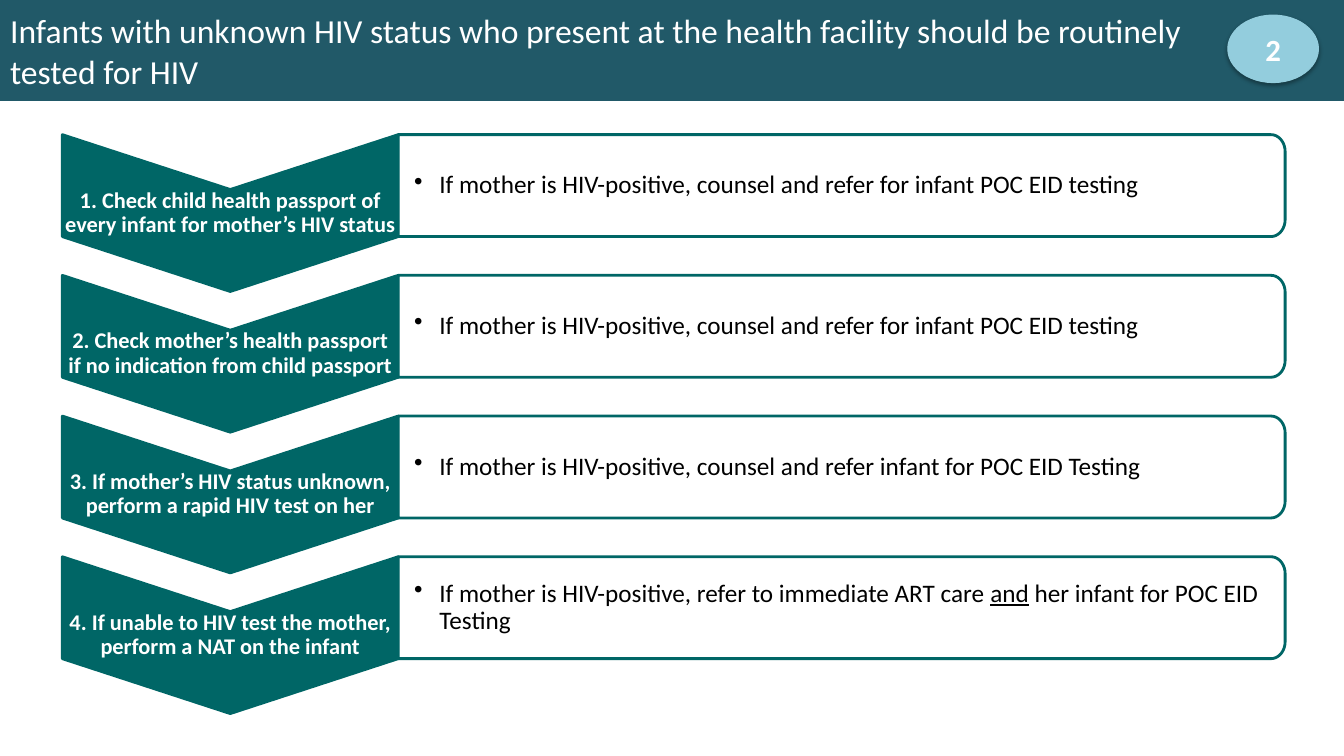
import math

from lxml import etree
from pptx import Presentation
from pptx.dml.color import RGBColor
from pptx.enum.shapes import MSO_SHAPE
from pptx.enum.text import MSO_ANCHOR, MSO_AUTO_SIZE, PP_ALIGN
from pptx.oxml.ns import qn
from pptx.util import Pt

OVAL = MSO_SHAPE.OVAL
MIDDLE = MSO_ANCHOR.MIDDLE
NO_FIT = MSO_AUTO_SIZE.NONE
LEFT, CENTER = PP_ALIGN.LEFT, PP_ALIGN.CENTER

FONT = "Calibri"
COLORS = {
    "banner": "215968",
    "badge": "93CDDD",
    "step": "006666",
    "white": "FFFFFF",
    "black": "000000",
}

TITLE = ("Infants with unknown HIV status who present at the health facility "
         "should be routinely\vtested for HIV")
# Underscores enclose underlined words.
STEPS = [
    ("1. Check child health passport of every infant for mother’s HIV status",
     "If mother is HIV-positive, counsel and refer for infant POC EID testing"),
    ("2. Check mother’s health passport if no indication from child passport",
     "If mother is HIV-positive, counsel and refer for infant POC EID testing"),
    ("3. If mother’s HIV status unknown, perform a rapid HIV test on her",
     "If mother is HIV-positive, counsel and refer infant for POC EID Testing"),
    ("4. If unable to HIV test the mother, perform a NAT on the infant",
     "If mother is HIV-positive, refer to immediate ART care _and_ "
     "her infant for POC EID Testing"),
]

STEP_LEFT, STEP_WIDTH = 44.6, 239.8
ACTION_LEFT, ACTION_WIDTH = 284.4, 633.6
FIRST_TOP, PITCH = 96.2, 100.5
ROW_HEIGHT, NOTCH = 72.8, 39.2
CORNER_WIDTH, CORNER_HEIGHT = 10.1, 12.1


def color(name):
    return RGBColor.from_string(COLORS[name])


def paint(shape, fill, line, line_width):
    shape.shadow.inherit = False
    shape.fill.solid()
    shape.fill.fore_color.rgb = color(fill)
    shape.line.color.rgb = color(line)
    shape.line.width = Pt(line_width)


def write(shape, text, size, ink, align, bold=False, margins=(7.2, 3.6, 7.2, 3.6)):
    """Fill a shape with one paragraph and return that paragraph."""
    frame = shape.text_frame
    frame.word_wrap = True
    frame.auto_size = NO_FIT
    frame.vertical_anchor = MIDDLE
    (frame.margin_left, frame.margin_top,
     frame.margin_right, frame.margin_bottom) = map(Pt, margins)
    para = frame.paragraphs[0]
    para.alignment = align
    para.font.name, para.font.size, para.font.bold = FONT, Pt(size), bold
    para.font.color.rgb = color(ink)
    for index, part in enumerate(text.split("_")):
        span = para.add_run()
        span.text = part
        if index % 2:
            span.font.underline = True
    return para


def add_outline(page, points):
    start, *rest = [(Pt(x), Pt(y)) for x, y in points]
    builder = page.shapes.build_freeform(*start)
    builder.add_line_segments(rest, close=True)
    return builder.convert_to_shape()


def add_title(page, deck):
    title = page.shapes.title
    title.left = title.top = 0
    title.width, title.height = deck.slide_width, Pt(72)
    title.fill.solid()
    title.fill.fore_color.rgb = color("banner")
    frame = title.text_frame
    frame.text = TITLE
    frame.word_wrap = True
    frame.auto_size = NO_FIT
    frame.vertical_anchor = MIDDLE
    para = frame.paragraphs[0]
    para.alignment = LEFT
    para.font.name, para.font.size = FONT, Pt(24)
    para.font.color.rgb = color("white")


def add_badge(page, number):
    badge = page.shapes.add_shape(OVAL, Pt(877), Pt(10.8), Pt(64.8), Pt(48.2))
    paint(badge, "badge", "badge", 0.75)
    write(badge, number, 22, "white", CENTER, bold=True)
    effects = badge.element.spPr.find(qn("a:effectLst"))
    shadow = etree.SubElement(effects, qn("a:outerShdw"), blurRad=str(Pt(3.1)),
                              dist=str(Pt(1.8)), dir="5400000", rotWithShape="0")
    shade = etree.SubElement(shadow, qn("a:srgbClr"), val=COLORS["black"])
    etree.SubElement(shade, qn("a:alpha"), val="35000")


def add_step(page, top, text):
    left, right = STEP_LEFT, STEP_LEFT + STEP_WIDTH
    middle, bottom = left + STEP_WIDTH / 2, top + ROW_HEIGHT
    step = add_outline(page, [(right, top), (right, bottom), (middle, bottom + NOTCH),
                              (left, bottom), (left, top), (middle, top + NOTCH)])
    paint(step, "step", "step", 2)
    para = write(step, text, 16, "white", CENTER, bold=True, margins=(0.8, 40, 0.8, 40))
    para.line_spacing = 0.9


def add_action(page, top, text):
    """Draw a box rounded on its right side, with one bulleted line."""
    right, bottom = ACTION_LEFT + ACTION_WIDTH, top + ROW_HEIGHT
    angles = [math.radians(degrees) for degrees in range(0, 91, 10)]
    corner = [(right - CORNER_WIDTH * (1 - math.sin(angle)),
               CORNER_HEIGHT * (1 - math.cos(angle))) for angle in angles]
    points = [(ACTION_LEFT, top)]
    points += [(x, top + inset) for x, inset in corner]
    points += [(x, bottom - inset) for x, inset in reversed(corner)]
    points.append((ACTION_LEFT, bottom))
    action = add_outline(page, points)
    paint(action, "white", "step", 2)
    fill = action.element.spPr.find(qn("a:solidFill"))
    etree.SubElement(fill[0], qn("a:alpha"), val="90000")
    para = write(action, text, 18, "black", LEFT, margins=(11.5, 4.3, 4.3, 4.3))
    para.level = 1
    para.line_spacing = 0.9
    properties = para._p.get_or_add_pPr()
    properties.set("marL", str(Pt(18)))
    properties.set("indent", str(Pt(-18)))
    bullet = etree.Element(qn("a:buChar"), char="•")
    properties.find(qn("a:lnSpc")).addnext(bullet)


def main():
    deck = Presentation()
    deck.slide_width, deck.slide_height = Pt(960), Pt(540)
    page = deck.slides.add_slide(deck.slide_layouts[5])
    add_title(page, deck)
    add_badge(page, "2")
    for index, (step, action) in enumerate(STEPS):
        top = FIRST_TOP + index * PITCH
        add_step(page, top, step)
        add_action(page, top, action)
    deck.save("out.pptx")


if __name__ == "__main__":
    main()
